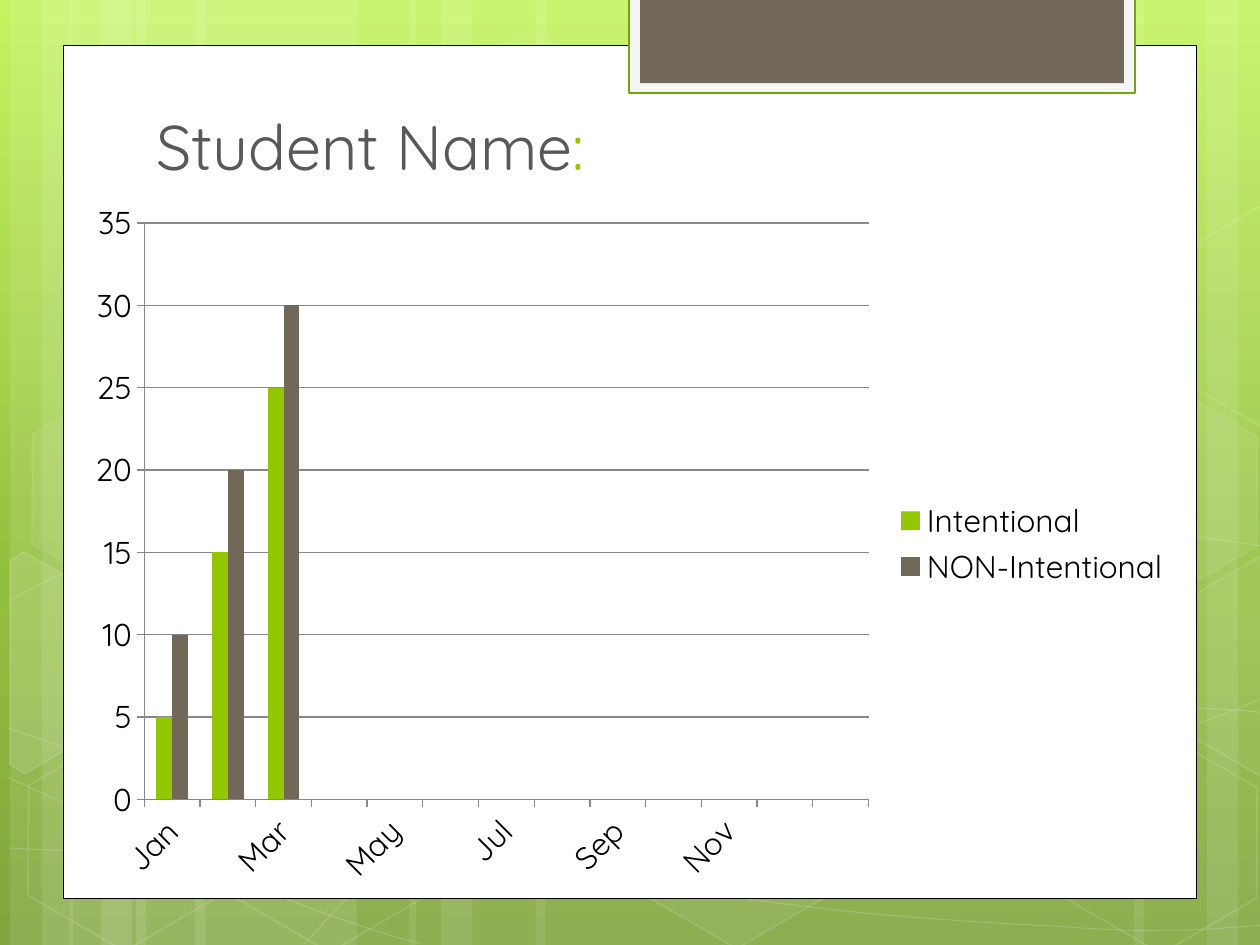
import dataclasses
import typing

import lxml.etree
import pptx
import pptx.chart.data
import pptx.dml.color
import pptx.enum.chart
import pptx.enum.shapes
import pptx.enum.text
import pptx.oxml.ns
import pptx.util

Inches = pptx.util.Inches
Pt = pptx.util.Pt
qn = pptx.oxml.ns.qn
Shapes = pptx.enum.shapes.MSO_SHAPE
Point = tuple[float, float]

FONT = "Quicksand"
COLORS = {
    "sky": "C3F35F", "leaf": "93BF3F", "moss": "81A53E", "white": "FFFFFF",
    "black": "000000", "tab_edge": "74A510", "tab_border": "F5F5F5",
    "brown": "71685A", "green": "94C600", "title": "595959", "grid": "878787",
}


@dataclasses.dataclass
class Style:
    fill: str | None = None
    fill_alpha: int = 100
    line: str | None = None
    line_width: float = 1
    line_alpha: int = 100


@dataclasses.dataclass
class Hexagon:
    left: float
    top: float
    fill_alpha: int
    line_alpha: int


@dataclasses.dataclass
class CutHexagon:
    points: list[Point]
    fill_alpha: int


BANDS = [
    (1.08, 1.75), (0.08, 0.5), (0.33, 0.83), (1.55, 1.75), (0.55, 0.5), (0.8, 0.83),
    (7.33, 1.75), (9.58, 0.42), (9, 0.83), (4.25, 3.08), (3.25, 0.5), (3.5, 0.83),
]
WAVES = [
    [(0.07, 6.73), (0.61, 6.76), (1.15, 6.79), (1.9, 6.78), (2.65, 6.77), (3.58, 6.75),
     (4.58, 6.65), (5.58, 6.55), (7, 6.36), (7.92, 6.17), (8.83, 5.98), (9.77, 5.68),
     (10.07, 5.51)],
    [(0.07, 4.77), (0.36, 4.61), (0.65, 4.46), (1.21, 4.31), (1.78, 4.16), (2.59, 3.94),
     (3.47, 3.87), (4.36, 3.8), (5.44, 3.79), (6.54, 3.87), (7.64, 3.95), (9.47, 4.26),
     (10.07, 4.34)],
    [(0.06, 6.17), (1.27, 6.72), (2.47, 7.27), (3.34, 7.49)],
    [(0.07, 5.78), (0.38, 5.89), (0.7, 6), (1.28, 6.16), (1.86, 6.31), (2.73, 6.56),
     (3.57, 6.73), (4.4, 6.9), (5.45, 7.08), (6.28, 7.18), (7.11, 7.29), (8, 7.33),
     (8.53, 7.36), (9.05, 7.4), (9.19, 7.38), (9.45, 7.38), (9.71, 7.37), (9.89, 7.35),
     (10.07, 7.34)],
    [(2.42, 7.49), (2.6, 7.29), (2.78, 7.09), (3.02, 6.91), (3.26, 6.73), (3.6, 6.53),
     (3.88, 6.39), (4.16, 6.25), (4.33, 6.19), (4.7, 6.09), (5.06, 5.99), (5.73, 5.85),
     (6.08, 5.78), (6.44, 5.71), (6.49, 5.71), (6.8, 5.69), (7.11, 5.66), (7.6, 5.63),
     (7.94, 5.62), (8.29, 5.61), (8.86, 5.62), (8.86, 5.62), (9.08, 5.62), (9.31, 5.62),
     (9.53, 5.62), (9.71, 5.63), (9.88, 5.64), (9.97, 5.65), (10.06, 5.66), (10.03, 5.65),
     (10.06, 5.66)],
]
HEXAGONS = [
    Hexagon(3.34, 0.36, 4, 8), Hexagon(4.97, 5.89, 6, 12), Hexagon(0.11, 5.91, 0, 12),
    Hexagon(0.14, 3.12, 7, 8), Hexagon(1.74, 5.92, 0, 12), Hexagon(8.34, 5.93, 0, 12),
    Hexagon(8.34, 3.14, 7, 8),
]
CUT_HEXAGONS = [
    CutHexagon([(0.08, 4.45), (0.19, 4.38), (0.96, 4.82), (0.95, 5.7), (0.2, 6.14),
                (0.08, 6.07)], 10),
    CutHexagon([(9.26, 4.85), (10.01, 4.41), (10.09, 4.46), (10.09, 6.13),
                (10.02, 6.17), (9.26, 5.73)], 4),
    CutHexagon([(9.26, 2.07), (10.01, 1.63), (10.1, 1.68), (10.09, 3.35),
                (10.02, 3.39), (9.26, 2.95)], 0),
]
MONTHS = ["Jan", "Feb", "Mar", "Apr", "May", "Jun", "Jul", "Aug", "Sep", "Oct", "Nov", "Dec", ""]
SERIES = {"Intentional": ([5, 15, 25], "green"), "NON-Intentional": ([10, 20, 30], "brown")}


def rgb(color: str) -> pptx.dml.color.RGBColor:
    return pptx.dml.color.RGBColor.from_string(COLORS[color])


def paint(fill: typing.Any, color: str, alpha: int = 100) -> None:
    fill.solid()
    fill.fore_color.rgb = rgb(color)
    if alpha < 100:
        value = fill._xPr.find(".//" + qn("a:srgbClr"))
        lxml.etree.SubElement(value, qn("a:alpha")).set("val", str(alpha * 1000))


def apply_style(shape: typing.Any, style: Style) -> None:
    shape.shadow.inherit = False
    if style.fill and style.fill_alpha:
        paint(shape.fill, style.fill, style.fill_alpha)
    else:
        shape.fill.background()
    if style.line:
        shape.line.width = Pt(style.line_width)
        paint(shape.line.fill, style.line, style.line_alpha)
    else:
        shape.line.fill.background()


def add_preset(slide: typing.Any, kind: typing.Any, box: tuple, style: Style) -> typing.Any:
    shape = slide.shapes.add_shape(kind, *map(Inches, box))
    apply_style(shape, style)
    return shape


def add_outline(slide: typing.Any, points: list[Point], closed: bool, style: Style) -> typing.Any:
    corners = [(Inches(x), Inches(y)) for x, y in points]
    builder = slide.shapes.build_freeform(*corners[0])
    builder.add_line_segments(corners[1:], close=closed)
    shape = builder.convert_to_shape()
    apply_style(shape, style)
    return shape


def add_wave(slide: typing.Any, controls: list[Point], style: Style) -> None:
    wave = add_outline(slide, controls, False, style)
    lines = list(wave.element.iter(qn("a:lnTo")))
    outline = lines[0].getparent()
    for start in range(0, len(lines), 3):
        curve = lxml.etree.SubElement(outline, qn("a:cubicBezTo"))
        for line in lines[start:start + 3]:
            curve.append(line[0])
            outline.remove(line)


def add_run(paragraph: typing.Any, text: str, *, size: float, color: str) -> None:
    run = paragraph.add_run()
    run.text = text
    run.font.name = FONT
    run.font.size = Pt(size)
    run.font.color.rgb = rgb(color)


def draw_background(slide: typing.Any) -> None:
    fill = slide.background.fill
    fill.gradient()
    fill.gradient_angle = 270
    stops = slide.element.find(".//" + qn("a:gsLst"))
    for stop in list(stops):
        stops.remove(stop)
    for position, color in ((0, "sky"), (62, "leaf"), (100, "moss")):
        stop = lxml.etree.SubElement(stops, qn("a:gs"))
        stop.set("pos", str(position * 1000))
        lxml.etree.SubElement(stop, qn("a:srgbClr")).set("val", COLORS[color])
    for left, width in BANDS:
        add_preset(slide, Shapes.RECTANGLE, (left, 0, width, 7.5), Style("white", 10))
    for wave in WAVES:
        add_wave(slide, wave, Style(line="white", line_width=0.5, line_alpha=20))
    for item in HEXAGONS:
        hexagon = add_preset(slide, Shapes.HEXAGON, (item.left, item.top, 1.75, 1.52),
                             Style("white", item.fill_alpha, "white", 1, item.line_alpha))
        hexagon.adjustments[0] = 0.285
        hexagon.rotation = 30
    for item in CUT_HEXAGONS:
        add_outline(slide, item.points, True, Style("white", item.fill_alpha, "white", 1, 12))


def draw_frame(slide: typing.Any) -> None:
    for box, style in (
        ((0.5, 0.36, 9, 6.77), Style("white", line="black", line_width=0.5)),
        ((4.99, -0.02, 4.02, 0.76), Style("tab_border", line="tab_edge", line_width=1.25)),
        ((5.08, -0.02, 3.84, 0.68), Style("brown")),
    ):
        add_preset(slide, Shapes.RECTANGLE, box, style)


def draw_title(slide: typing.Any) -> None:
    frame = slide.shapes.add_textbox(*map(Inches, (1.14, 0.75, 7.68, 0.75))).text_frame
    frame.word_wrap = True
    frame.vertical_anchor = pptx.enum.text.MSO_ANCHOR.BOTTOM
    add_run(frame.paragraphs[0], "Student Name", size=36, color="title")
    add_run(frame.paragraphs[0], ":", size=36, color="green")


def draw_chart(slide: typing.Any) -> None:
    data = pptx.chart.data.CategoryChartData()
    data.categories = MONTHS
    for name, (values, _) in SERIES.items():
        data.add_series(name, values + [None] * (len(MONTHS) - len(values)))
    chart = slide.shapes.add_chart(pptx.enum.chart.XL_CHART_TYPE.COLUMN_CLUSTERED,
                                   *map(Inches, (0.58, 1.5, 8.81, 5.63)), data).chart
    chart.has_title = False
    chart.font.name = FONT
    chart.font.size = Pt(18)
    chart.font.color.rgb = rgb("black")
    chart.has_legend = True
    chart.legend.position = pptx.enum.chart.XL_LEGEND_POSITION.RIGHT
    chart.legend.include_in_layout = False
    plot = chart.plots[0]
    plot.gap_width = 150
    plot.overlap = 0
    plot.vary_by_categories = False
    for series, (_, color) in zip(plot.series, SERIES.values()):
        paint(series.format.fill, color)
    months, counts = chart.category_axis, chart.value_axis
    counts.minimum_scale, counts.maximum_scale, counts.major_unit = 0, 35, 5
    counts.has_major_gridlines = True
    for line in (months.format.line, counts.format.line, counts.major_gridlines.format.line):
        line.width = Pt(0.75)
        paint(line.fill, "grid")
    for axis in (months, counts):
        axis.major_tick_mark = pptx.enum.chart.XL_TICK_MARK.OUTSIDE


def main() -> None:
    deck = pptx.Presentation()
    deck.slide_width, deck.slide_height = Inches(10), Inches(7.5)
    slide = deck.slides.add_slide(deck.slide_layouts[6])
    for draw in (draw_background, draw_frame, draw_title, draw_chart):
        draw(slide)
    deck.save("out.pptx")


if __name__ == "__main__":
    main()
